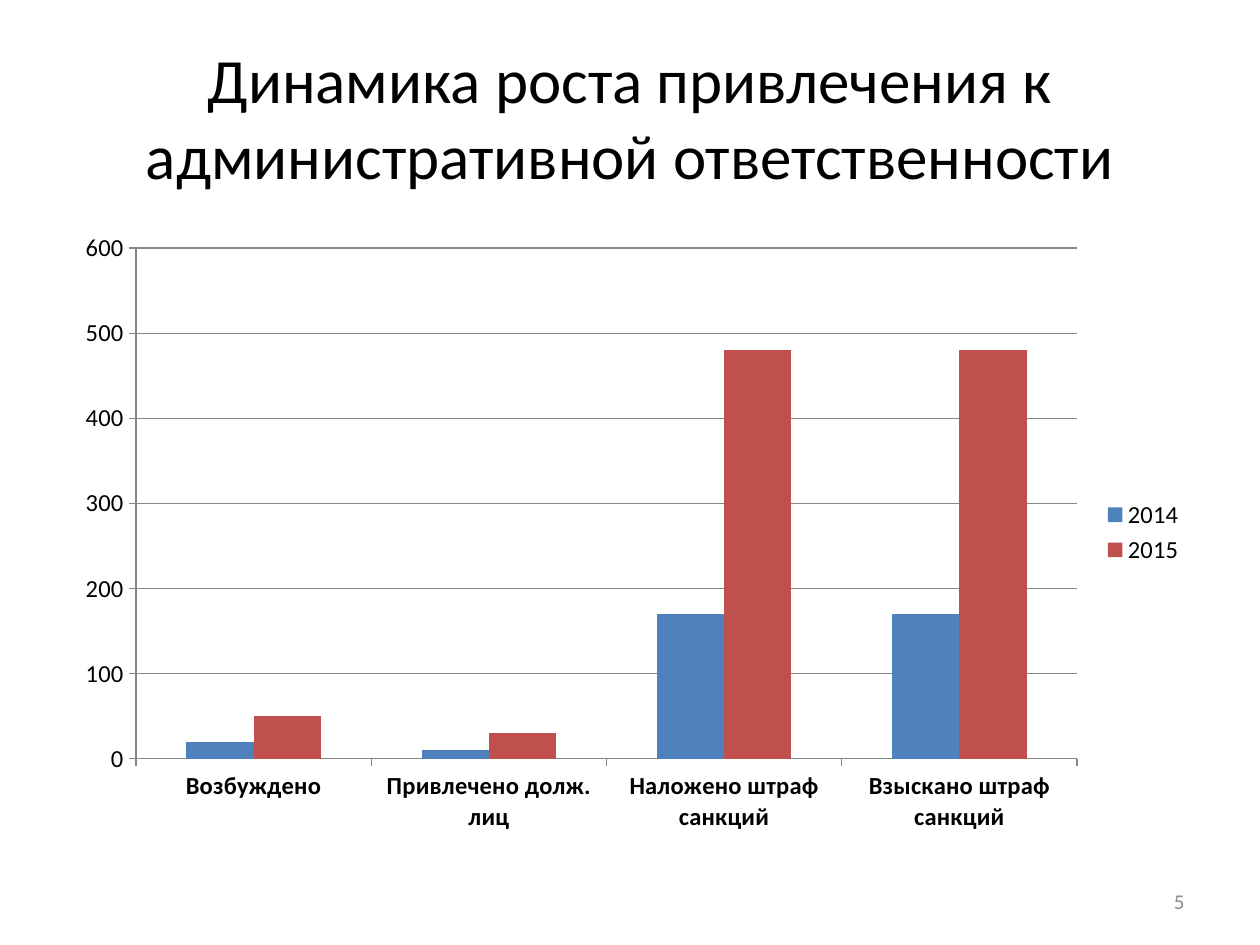
from pptx import Presentation
from pptx.chart.data import CategoryChartData
from pptx.dml.color import RGBColor
from pptx.enum import chart as ch, text
from pptx.util import Pt

BLACK = RGBColor(0x00, 0x00, 0x00)
GRAY = RGBColor(0x8C, 0x8C, 0x8C)
LINE = RGBColor(0x86, 0x86, 0x86)
BLUE = RGBColor(0x4F, 0x81, 0xBD)
RED = RGBColor(0xC0, 0x50, 0x4D)


class Deck:
    """Holds the style and the current slide."""
    font = "Calibri"

    def __init__(self, prs):
        self.s = prs.slides.add_slide(prs.slide_layouts[6])

    def style(self, font, size, color=BLACK, bold=False):
        font.name, font.size, font.bold = self.font, Pt(size), bold
        font.color.rgb = color

    def text(self, box, content, size, color, align):
        sp = self.s.shapes.add_textbox(*map(Pt, box))
        tf = sp.text_frame
        tf.word_wrap = True
        tf.vertical_anchor = text.MSO_ANCHOR.MIDDLE
        p = tf.paragraphs[0]
        p.text, p.alignment = content, align
        self.style(p.font, size, color)

    def columns(self, box, categories, series, top, step):
        data = CategoryChartData()
        data.categories = categories
        for name, values, _ in series:
            data.add_series(name, values)
        chart = self.s.shapes.add_chart(
            ch.XL_CHART_TYPE.COLUMN_CLUSTERED, *map(Pt, box), data).chart
        chart.has_title = False
        self.style(chart.font, 10)

        # Columns
        plot = chart.plots[0]
        plot.gap_width, plot.overlap, plot.vary_by_categories = 150, 0, False
        for ser, (_, _, color) in zip(plot.series, series):
            ser.format.fill.solid()
            ser.format.fill.fore_color.rgb = color

        # Axes and gridlines
        cat, val = chart.category_axis, chart.value_axis
        val.minimum_scale, val.maximum_scale, val.major_unit = 0, top, step
        val.has_major_gridlines = True
        for axis, bold in ((cat, True), (val, False)):
            axis.major_tick_mark = ch.XL_TICK_MARK.OUTSIDE
            axis.minor_tick_mark = ch.XL_TICK_MARK.NONE
            self.style(axis.tick_labels.font, 14, bold=bold)
        for part in (cat, val, val.major_gridlines):
            part.format.line.color.rgb = LINE
            part.format.line.width = Pt(0.75)

        # Legend
        chart.has_legend = True
        chart.legend.position = ch.XL_LEGEND_POSITION.RIGHT
        chart.legend.include_in_layout = False
        self.style(chart.legend.font, 14)


def main():
    prs = Presentation()
    prs.slide_width, prs.slide_height = Pt(720), Pt(540)
    deck = Deck(prs)

    # Title
    deck.text((36, 21.6, 648, 90),
              "Динамика роста привлечения к административной ответственности",
              36, BLACK, text.PP_ALIGN.CENTER)

    # Chart
    deck.columns((36, 126, 648, 356.4),
                 ["Возбуждено", "Привлечено долж. лиц",
                  "Наложено штраф санкций", "Взыскано штраф санкций"],
                 [("2014", (20, 10, 170, 170), BLUE),
                  ("2015", (50, 30, 480, 480), RED)],
                 top=600, step=100)

    # Slide number
    deck.text((516, 500.5, 168, 28.8), "5", 12, GRAY, text.PP_ALIGN.RIGHT)

    prs.save("out.pptx")


if __name__ == "__main__":
    main()
